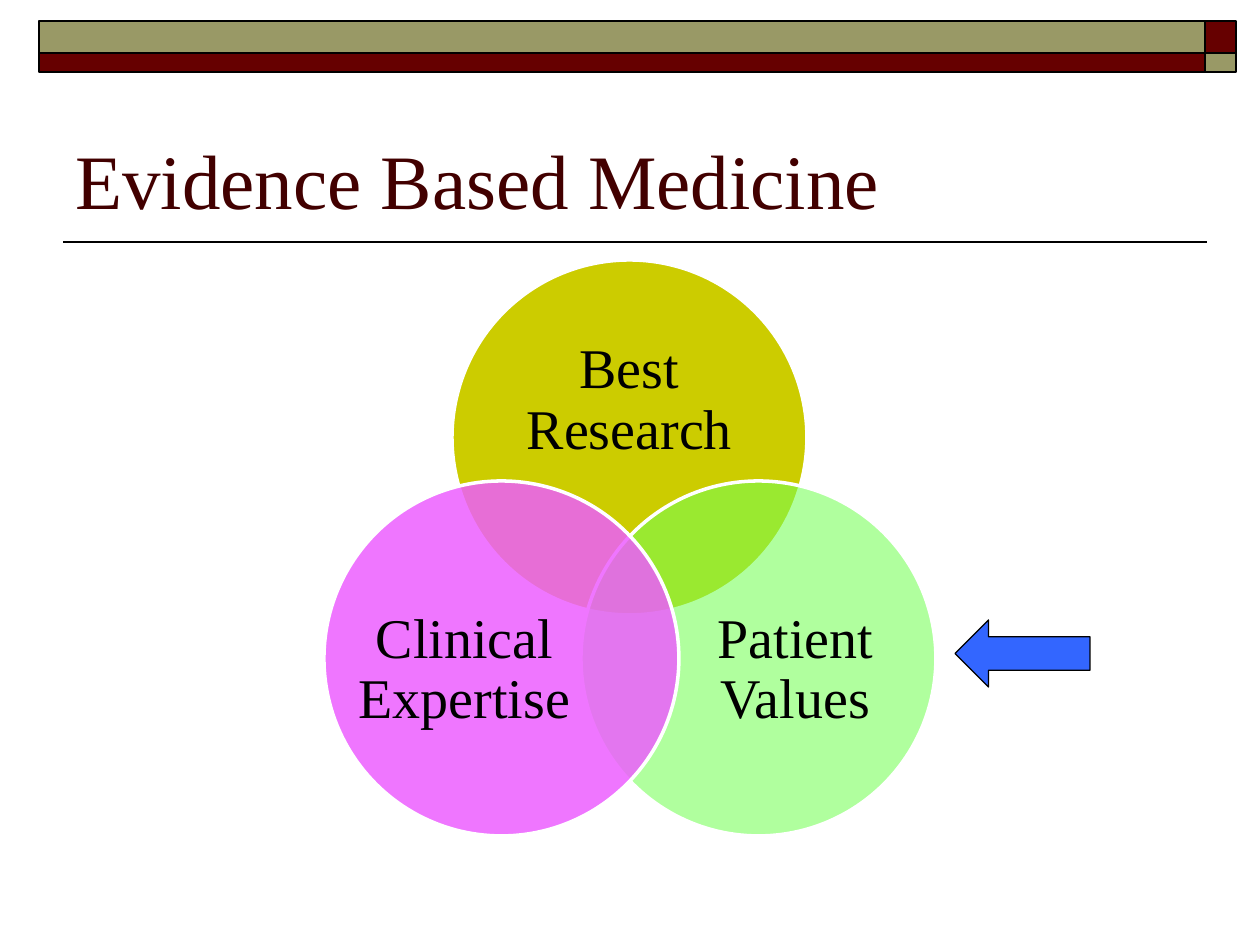
import pptx
import pptx.util
import pptx.dml.color
import pptx.enum.shapes
import pptx.enum.text
import pptx.oxml.ns
import lxml.etree

KIND = pptx.enum.shapes.MSO_SHAPE
ANCHOR = pptx.enum.text.MSO_ANCHOR
ALIGN = pptx.enum.text.PP_ALIGN
COLORS = {
    "olive": "999966", "maroon": "660000", "title": "420000",
    "yellow": "CCCC00", "green": "75FF56", "pink": "ED5CFF",
    "blue": "3366FF", "black": "000000", "white": "FFFFFF",
}


def px(n):
    return round(n * 914400 / 126)


def color(name):
    return pptx.dml.color.RGBColor.from_string(COLORS[name])


def apply(target, values):
    for key, value in values.items():
        setattr(target, key, value)


class Deck:
    font = "Times New Roman"

    def __init__(self, width, height):
        self.show = pptx.Presentation()
        self.show.slide_width, self.show.slide_height = px(width), px(height)
        self.slide = self.show.slides.add_slide(self.show.slide_layouts[6])

    def shape(self, kind, box, fill, line="black", weight=1, alpha=100):
        item = self.slide.shapes.add_shape(kind, *map(px, box))
        item.shadow.inherit = False
        item.fill.solid()
        item.fill.fore_color.rgb = color(fill)
        item.line.color.rgb = color(line)
        item.line.width = pptx.util.Pt(weight)
        if alpha < 100:
            tone = item.fill._xPr.find(".//" + pptx.oxml.ns.qn("a:srgbClr"))
            lxml.etree.SubElement(tone, pptx.oxml.ns.qn("a:alpha"), val=str(alpha * 1000))

    def line(self, start, end):
        item = self.slide.shapes.add_connector(
            pptx.enum.shapes.MSO_CONNECTOR.STRAIGHT, *map(px, start + end))
        item.line.color.rgb = color("black")
        item.line.width = pptx.util.Pt(1)
        lxml.etree.SubElement(item._element.spPr, pptx.oxml.ns.qn("a:effectLst"))

    def text(self, words, box, size, tint, frame, para):
        body = self.slide.shapes.add_textbox(*map(px, box)).text_frame
        apply(body, {"word_wrap": True, **frame})
        block = body.paragraphs[0]
        apply(block, para)
        run = block.add_run()
        run.text = words
        apply(run.font, {"name": self.font, "size": pptx.util.Pt(size)})
        run.font.color.rgb = color(tint)


def main():
    deck = Deck(1260, 945)
    deck.line((1207, 242), (63, 242))

    cols = ((39, 1166), (1205, 31))
    rows = ((21, 32), (53, 19))
    fills = ("olive", "maroon")
    for r, (top, high) in enumerate(rows):
        for c, (left, wide) in enumerate(cols):
            deck.shape(KIND.RECTANGLE, (left, top, wide, high), fills[(r + c) % 2])

    deck.text("Evidence Based Medicine", (63, 73, 1134, 158), 44, "title",
              {"vertical_anchor": ANCHOR.BOTTOM}, {"alignment": ALIGN.LEFT})

    sides = ("left", "top", "right", "bottom")
    frame = {"vertical_anchor": ANCHOR.MIDDLE, **{f"margin_{s}": 0 for s in sides}}
    para = {"alignment": ALIGN.CENTER, "line_spacing": 0.9}
    size = 355
    venn = (
        ("Best Research", (452, 260), "yellow", 100, (499, 321, 261, 160)),
        ("Patient Values", (581, 481), "green", 57, (689, 573, 213, 195)),
        ("Clinical Expertise", (324, 481), "pink", 84, (358, 573, 213, 195)),
    )
    for words, spot, fill, alpha, box in venn:
        deck.shape(KIND.OVAL, spot + (size, size), fill, "white", 2, alpha)
        deck.text(words, box, 32, "black", frame, para)

    deck.shape(KIND.LEFT_ARROW, (955, 620, 135, 67), "blue", weight=0.75)
    deck.show.save("out.pptx")


if __name__ == "__main__":
    main()
